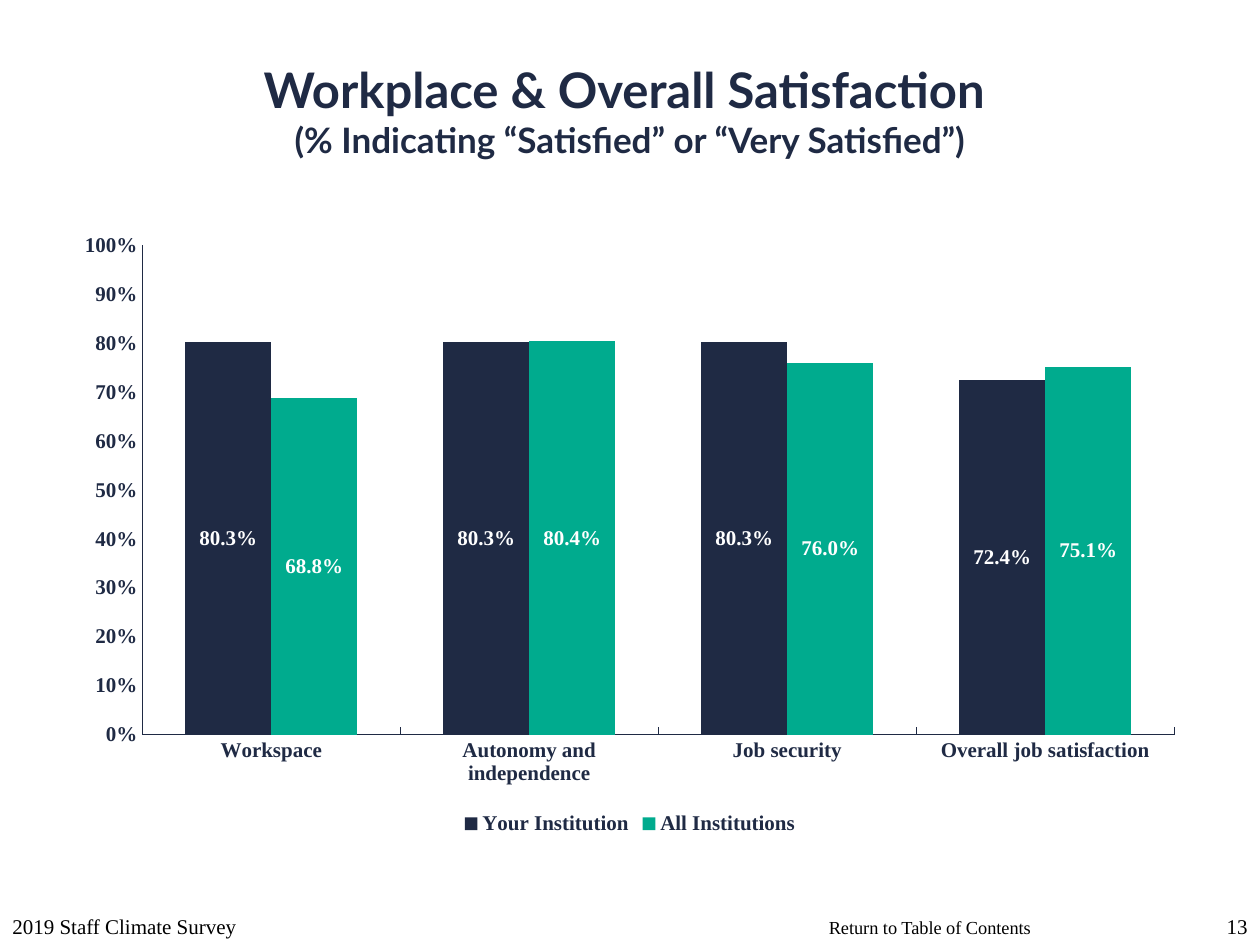
from dataclasses import dataclass

import pptx
import pptx.chart.data
import pptx.dml.color
import pptx.enum.chart
import pptx.enum.text
import pptx.oxml
import pptx.oxml.ns
import pptx.util

Pt = pptx.util.Pt
RGB = pptx.dml.color.RGBColor.from_string
ALIGN = pptx.enum.text.PP_ALIGN
ANCHOR = pptx.enum.text.MSO_ANCHOR
XL = pptx.enum.chart


@dataclass(frozen=True)
class Theme:
    navy: str = "1F2A44"
    green: str = "00AB8E"
    white: str = "FFFFFF"
    black: str = "000000"
    head_font: str = "Lato"
    body_font: str = "Times New Roman"
    title: float = 28
    subtitle: float = 20
    body: float = 12
    link: float = 10.5
    line: float = 0.75


class SlideBuilder:
    def __init__(self, slide, theme):
        self.s = slide
        self.t = theme

    def style(self, font, size, color, name=None, bold=True):
        font.size = Pt(size)
        font.name = name or self.t.body_font
        font.bold = bold
        font.color.rgb = RGB(color)

    def text_box(self, box, anchor, align, wrap=True):
        """Add an empty text box and return its first paragraph."""
        tf = self.s.shapes.add_textbox(*map(Pt, box)).text_frame
        tf.word_wrap = wrap
        tf.vertical_anchor = anchor
        p = tf.paragraphs[0]
        p.alignment = align
        return p

    def title(self, box, heading, subheading):
        p = self.text_box(box, ANCHOR.MIDDLE, ALIGN.CENTER)
        r = p.add_run()
        r.text = heading
        self.style(r.font, self.t.title, self.t.navy, self.t.head_font)
        p.add_line_break()
        r = p.add_run()
        r.text = subheading
        self.style(r.font, self.t.subtitle, self.t.navy, self.t.head_font)

    def footer(self, box, text, size, anchor=ANCHOR.BOTTOM, align=ALIGN.LEFT, wrap=True):
        r = self.text_box(box, anchor, align, wrap).add_run()
        r.text = text
        self.style(r.font, size, self.t.black, bold=False)

    def column_chart(self, box, categories, series):
        """Add clustered columns; series maps a name to (colour, values)."""
        data = pptx.chart.data.CategoryChartData(number_format="0.0%")
        data.categories = categories
        for name, (_, values) in series.items():
            data.add_series(name, values)
        chart = self.s.shapes.add_chart(
            XL.XL_CHART_TYPE.COLUMN_CLUSTERED, *map(Pt, box), data).chart
        chart.has_title = False
        self.style(chart.font, self.t.body, self.t.navy)

        chart.has_legend = True
        chart.legend.position = XL.XL_LEGEND_POSITION.BOTTOM
        chart.legend.include_in_layout = False
        self.style(chart.legend.font, self.t.body, self.t.navy)

        plot = chart.plots[0]
        plot.gap_width = 100
        plot.overlap = 0
        plot.vary_by_categories = False
        for ser, (color, _) in zip(plot.series, series.values()):
            ser.format.fill.solid()
            ser.format.fill.fore_color.rgb = RGB(color)
            labels = ser.data_labels
            labels.show_value = True
            labels.number_format = "0.0%"
            labels.number_format_is_linked = False
            labels.position = XL.XL_LABEL_POSITION.CENTER
            self.style(labels.font, self.t.body, self.t.white)

        self.axis(chart.category_axis, XL.XL_TICK_MARK.INSIDE)
        axis = chart.value_axis
        self.axis(axis, XL.XL_TICK_MARK.NONE)
        axis.minimum_scale, axis.maximum_scale, axis.major_unit = 0, 1, 0.1
        axis.tick_labels.number_format = "0%"
        axis.tick_labels.number_format_is_linked = False
        self.plot_layout(chart, x=0.07, y=0.04, w=0.91, h=0.79)

    def axis(self, axis, tick):
        axis.has_major_gridlines = False
        axis.major_tick_mark = tick
        axis.minor_tick_mark = XL.XL_TICK_MARK.NONE
        axis.format.line.color.rgb = RGB(self.t.navy)
        axis.format.line.width = Pt(self.t.line)
        self.style(axis.tick_labels.font, self.t.body, self.t.navy)

    def plot_layout(self, chart, **fractions):
        """Fix the inner plot area as fractions of the chart frame."""
        qn = pptx.oxml.ns.qn
        area = chart.plots[0]._element.getparent()
        for old in area.findall(qn("c:layout")):
            area.remove(old)
        values = "".join(f'<c:{k} val="{v}"/>' for k, v in fractions.items())
        area.insert(0, pptx.oxml.parse_xml(
            f'<c:layout {pptx.oxml.ns.nsdecls("c")}><c:manualLayout>'
            '<c:layoutTarget val="inner"/><c:xMode val="edge"/><c:yMode val="edge"/>'
            f'{values}</c:manualLayout></c:layout>'))


def main():
    prs = pptx.Presentation()
    prs.slide_width, prs.slide_height = Pt(720), Pt(540)
    theme = Theme()
    b = SlideBuilder(prs.slides.add_slide(prs.slide_layouts[6]), theme)

    b.footer((466.5, 519.8, 131, 20), "Return to Table of Contents", theme.link,
             ANCHOR.TOP, wrap=False)
    b.title((0, 18, 720, 90), "Workplace & Overall Satisfaction ",
            "(% Indicating “Satisfied” or “Very Satisfied”)")
    b.column_chart(
        (36, 126, 648, 354),
        ["Workspace", "Autonomy and independence", "Job security",
         "Overall job satisfaction"],
        {"Your Institution": (theme.navy, (0.803, 0.803, 0.803, 0.724)),
         "All Institutions": (theme.green, (0.688, 0.804, 0.76, 0.751))})
    b.footer((0, 504, 228, 36), "2019 Staff Climate Survey", theme.body)
    b.footer((684, 504, 36, 36), "13", theme.body, align=ALIGN.RIGHT)

    prs.save("out.pptx")


if __name__ == "__main__":
    main()
